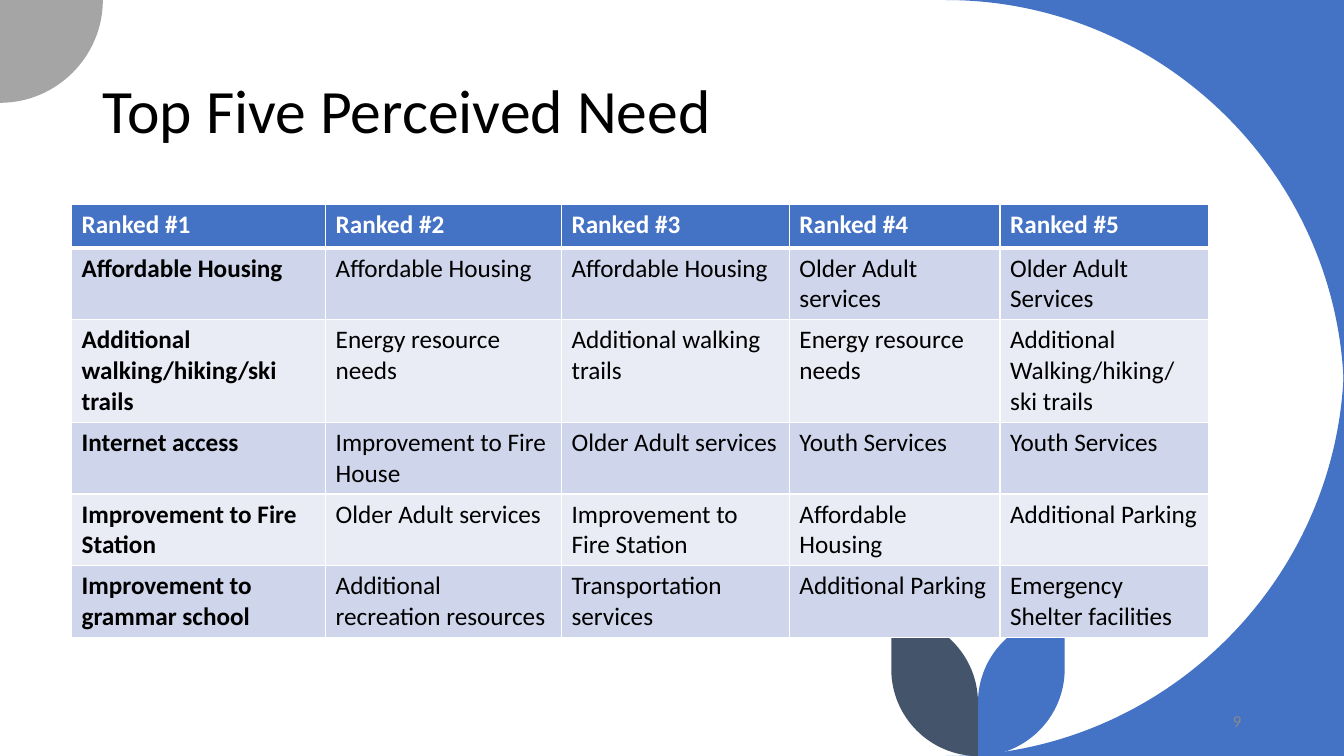
from lxml.etree import SubElement
from pptx import Presentation
from pptx.dml.color import RGBColor
from pptx.enum.text import MSO_ANCHOR, PP_ALIGN
from pptx.oxml.ns import qn
from pptx.util import Inches, Pt

TITLE = "Top Five Perceived Need"
PAGE_NUMBER = "9"
NEEDS = [
    ("Ranked #1", "Ranked #2", "Ranked #3", "Ranked #4", "Ranked #5"),
    ("Affordable Housing", "Affordable Housing", "Affordable Housing",
     "Older Adult services", "Older Adult Services"),
    ("Additional walking/hiking/ski trails", "Energy resource needs",
     "Additional walking trails", "Energy resource needs",
     "Additional Walking/hiking/ ski trails"),
    ("Internet access", "Improvement to Fire House", "Older Adult services",
     "Youth Services", "Youth Services"),
    ("Improvement to Fire Station", "Older Adult services",
     "Improvement to Fire Station", "Affordable Housing", "Additional Parking"),
    ("Improvement to grammar school", "Additional recreation resources",
     "Transportation services", "Additional Parking",
     "Emergency Shelter facilities"),
]
COLUMN_WIDTHS = [2.52, 2.34, 2.26, 2.09, 2.07]
ROW_HEIGHTS = [0.43, 0.71, 1.02, 0.71, 0.71, 0.71]

FONT = "Calibri"
BLUE, SLATE, GRAY = "4472C4", "44546A", "A5A5A5"
BLACK, WHITE, PAGE_GRAY = "000000", "FFFFFF", "898989"
BANDS = ["E9EBF5", "CFD5EA"]

WIDTH, HEIGHT = 13.33, 7.5
SWEEP, DISC = 3.95, 1.02
LEAF_X, LEAF_TOP, LEAF_SIZE = 9.7, 6.11, 0.86
ARC = 0.55  # how far the handles of a quarter circle reach to its corner


def color(value):
    return RGBColor.from_string(value)


def style(paragraph, size, ink, bold=False):
    for run in paragraph.runs:
        run.font.name = FONT
        run.font.size = Pt(size)
        run.font.bold = bold
        run.font.color.rgb = color(ink)


def quarter(start, corner, end):
    """Two handles and the end of a quarter circle that bulges to corner."""
    handles = [tuple(p + ARC * (q - p) for p, q in zip(point, corner))
               for point in (start, end)]
    return handles + [end]


def draw_outline(slide, start, segments, fill):
    """Draw segments of one point (a line) or three points (a curve)."""
    points = [point for segment in segments for point in segment]
    builder = slide.shapes.build_freeform(Inches(start[0]), Inches(start[1]))
    builder.add_line_segments([(Inches(x), Inches(y)) for x, y in points])
    outline = builder.convert_to_shape()
    outline.shadow.inherit = False
    outline.fill.solid()
    outline.fill.fore_color.rgb = color(fill)
    outline.line.fill.background()

    steps = iter(list(outline.element.iter(qn("a:lnTo"))))
    for segment in segments:
        first, *others = [next(steps) for _ in segment]
        if others:
            first.tag = qn("a:cubicBezTo")
        for other in others:
            first.append(other[0])
            other.getparent().remove(other)


def draw_leaf(slide, side, fill):
    """Draw the leaf right (side 1) or left (side -1) of the stem."""
    outer = LEAF_X + side * LEAF_SIZE
    tip, shoulder = (outer, LEAF_TOP), (outer, HEIGHT - LEAF_SIZE)
    foot, stem = (LEAF_X, HEIGHT), (LEAF_X, LEAF_TOP + LEAF_SIZE)
    draw_outline(slide, tip, [
        [shoulder], quarter(shoulder, (outer, HEIGHT), foot),
        [stem], quarter(stem, (LEAF_X, LEAF_TOP), tip)], fill)


def draw_decoration(slide):
    for edge, turn in ((0, SWEEP), (HEIGHT, HEIGHT - SWEEP)):
        inner, corner, side = (WIDTH - SWEEP, edge), (WIDTH, edge), (WIDTH, turn)
        draw_outline(slide, corner, [[inner], quarter(inner, corner, side)], BLUE)
    top, left = (DISC, 0), (0, DISC)
    draw_outline(slide, (0, 0), [[top], quarter(top, (DISC, DISC), left)], GRAY)
    draw_leaf(slide, 1, BLUE)
    draw_leaf(slide, -1, SLATE)


def write_title(slide):
    title = slide.shapes.title
    title.left, title.top = Inches(0.92), Inches(0.4)
    title.width, title.height = Inches(11.5), Inches(1.45)
    title.text_frame.text = TITLE
    title.text_frame.vertical_anchor = MSO_ANCHOR.MIDDLE
    heading = title.text_frame.paragraphs[0]
    heading.alignment = PP_ALIGN.LEFT
    heading.line_spacing = 0.9
    style(heading, 44, BLACK)


def set_borders(cell, bottom):
    """Draw white borders of 1 point, and the bottom one as given."""
    properties = cell._tc.get_or_add_tcPr()
    for edge, points in (("L", 1), ("R", 1), ("T", 1), ("B", bottom)):
        line = SubElement(properties, qn(f"a:ln{edge}"), w=str(Pt(points)))
        paint = SubElement(line, qn("a:solidFill"))
        SubElement(paint, qn("a:srgbClr"), val=WHITE)


def add_needs_table(slide):
    needs = slide.shapes.add_table(
        len(NEEDS), len(COLUMN_WIDTHS), Inches(0.71), Inches(2.03),
        Inches(sum(COLUMN_WIDTHS)), Inches(sum(ROW_HEIGHTS))).table
    needs.first_col = True
    for column, width in zip(needs.columns, COLUMN_WIDTHS):
        column.width = Inches(width)
    for row, height in zip(needs.rows, ROW_HEIGHTS):
        row.height = Inches(height)
    for r, ranked in enumerate(NEEDS):
        for c, need in enumerate(ranked):
            cell = needs.cell(r, c)
            cell.text_frame.text = need
            set_borders(cell, bottom=1 if r else 3)
            cell.fill.solid()
            cell.fill.fore_color.rgb = color(BANDS[r % 2] if r else BLUE)
            style(cell.text_frame.paragraphs[0], 18, BLACK if r else WHITE,
                  bold=r == 0 or c == 0)


def add_page_number(slide):
    page = slide.shapes.add_textbox(Inches(9.41), Inches(6.95), Inches(3), Inches(0.4))
    page.text_frame.word_wrap = True
    page.text_frame.vertical_anchor = MSO_ANCHOR.MIDDLE
    page.text_frame.text = PAGE_NUMBER
    number = page.text_frame.paragraphs[0]
    number.alignment = PP_ALIGN.RIGHT
    style(number, 12, PAGE_GRAY)


def main():
    deck = Presentation()
    deck.slide_width, deck.slide_height = Inches(WIDTH), Inches(HEIGHT)
    slide = deck.slides.add_slide(deck.slide_layouts[5])
    draw_decoration(slide)
    write_title(slide)
    add_needs_table(slide)
    add_page_number(slide)
    deck.save("out.pptx")


if __name__ == "__main__":
    main()
